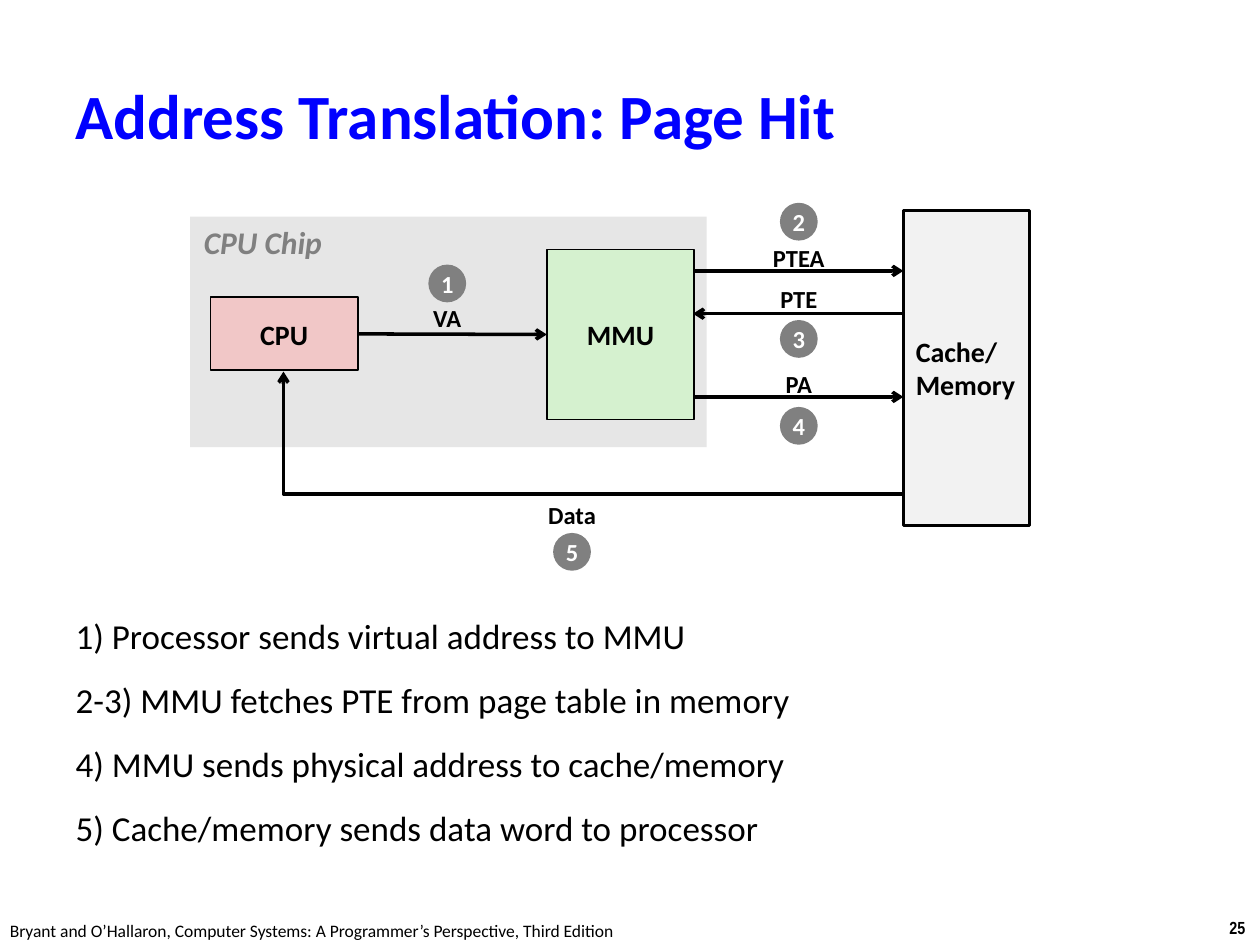
from lxml.etree import SubElement
from pptx import Presentation
from pptx.dml.color import RGBColor
from pptx.enum.shapes import MSO_CONNECTOR, MSO_SHAPE
from pptx.enum.text import MSO_ANCHOR, PP_ALIGN
from pptx.oxml.ns import qn
from pptx.util import Inches, Pt

BLACK, GRAY, WHITE = "000000", "808080", "FFFFFF"
BADGE_SIZE = 0.3
LABEL_WIDTH, LABEL_HEIGHT = 0.8, 0.33
STEPS = [
    "1) Processor sends virtual address to MMU",
    "2-3) MMU fetches PTE from page table in memory",
    "4) MMU sends physical address to cache/memory",
    "5) Cache/memory sends data word to processor",
]


def color(hex_value):
    return RGBColor.from_string(hex_value)


def write_text(shape, lines, size, text_color=BLACK, align=PP_ALIGN.LEFT,
               anchor=MSO_ANCHOR.MIDDLE, wrap=False, **font_values):
    frame = shape.text_frame
    frame.text = "\n".join(lines)
    frame.word_wrap = wrap
    frame.vertical_anchor = anchor
    values = {"name": "Calibri", "size": Pt(size), "bold": True, **font_values}
    for paragraph in frame.paragraphs:
        paragraph.alignment = align
        for run in paragraph.runs:
            for name, value in values.items():
                setattr(run.font, name, value)
            run.font.color.rgb = color(text_color)


def place(shape, left, top, width, height):
    values = {"left": left, "top": top, "width": width, "height": height}
    for name, value in values.items():
        setattr(shape, name, Inches(value))


def add_block(slide, box, fill, line_width=None, kind=MSO_SHAPE.RECTANGLE):
    shape = slide.shapes.add_shape(kind, *map(Inches, box))
    shape.shadow.inherit = False
    shape.fill.solid()
    shape.fill.fore_color.rgb = color(fill)
    if line_width:
        shape.line.color.rgb = color(BLACK)
        shape.line.width = Pt(line_width)
    else:
        shape.line.fill.background()
    return shape


def add_label(slide, box, text, size, **text_values):
    label = slide.shapes.add_textbox(*map(Inches, box))
    write_text(label, [text], size, **text_values)


def add_signal_label(slide, center, top, text):
    box = (center - LABEL_WIDTH / 2, top, LABEL_WIDTH, LABEL_HEIGHT)
    add_label(slide, box, text, 14, align=PP_ALIGN.CENTER)


def add_badge(slide, center, top, number):
    box = (center - BADGE_SIZE / 2, top, BADGE_SIZE, BADGE_SIZE)
    badge = add_block(slide, box, GRAY, kind=MSO_SHAPE.OVAL)
    write_text(badge, [str(number)], 14, WHITE, PP_ALIGN.CENTER)


def add_arrow(slide, start, end, kind=MSO_CONNECTOR.STRAIGHT):
    connector = slide.shapes.add_connector(kind, *map(Inches, start + end))
    connector.line.color.rgb = color(BLACK)
    connector.line.width = Pt(2)
    properties = connector.element.spPr
    SubElement(properties.find(qn("a:ln")), qn("a:tailEnd"), type="arrow")
    SubElement(properties, qn("a:effectLst"))
    return connector


def add_corner_arrow(slide, start, end):
    connector = add_arrow(slide, start, end, MSO_CONNECTOR.ELBOW)
    # One bend only: sideways, then up
    connector.element.spPr.find(qn("a:prstGeom")).set("prst", "bentConnector2")


def fill_steps(body):
    place(body, 0.5, 4.83, 7.42, 2.25)
    write_text(body, STEPS, 20, anchor=MSO_ANCHOR.TOP, wrap=True, bold=False)
    for paragraph in body.text_frame.paragraphs:
        paragraph.space_before = Pt(12.5)
        properties = paragraph._p.get_or_add_pPr()
        properties.set("marL", str(Inches(0.38)))
        properties.set("indent", str(Inches(-0.38)))
        SubElement(properties, qn("a:buNone"))


def main():
    presentation = Presentation()
    presentation.slide_width = Inches(10)
    presentation.slide_height = Inches(7.5)
    slide = presentation.slides.add_slide(presentation.slide_layouts[1])

    # Chip area, behind the hardware units
    add_block(slide, (1.51, 1.72, 4.1, 1.83), "E6E6E6")
    add_label(slide, (1.52, 1.72, 1.16, 0.4), "CPU Chip", 18, text_color=GRAY,
              anchor=MSO_ANCHOR.TOP, italic=True)

    # Title and steps
    title, body = slide.placeholders
    place(title, 0.5, 0.48, 9.53, 0.86)
    write_text(title, ["Address Translation: Page Hit"], 36, "0000FF", wrap=True)
    fill_steps(body)

    # Hardware units
    cpu = add_block(slide, (1.67, 2.36, 1.17, 0.58), "F1C7C7", 1)
    mmu = add_block(slide, (4.34, 1.98, 1.17, 1.35), "D5F1CF", 1)
    memory = add_block(slide, (7.17, 1.67, 1, 2.5), "F2F2F2", 1.5)
    write_text(cpu, ["CPU"], 16, align=PP_ALIGN.CENTER)
    write_text(mmu, ["MMU"], 16, align=PP_ALIGN.CENTER)
    write_text(memory, ["Cache/", "Memory"], 16)

    # Signals between the units
    address_arrow = add_arrow(slide, (2.84, 2.65), (4.34, 2.65))
    address_arrow.begin_connect(cpu, 3)
    address_arrow.end_connect(mmu, 1)
    mmu_side, memory_side = 5.5, 7.17
    add_arrow(slide, (mmu_side, 2.15), (memory_side, 2.15))
    add_arrow(slide, (memory_side, 2.49), (mmu_side, 2.49))
    add_arrow(slide, (mmu_side, 3.15), (memory_side, 3.15))
    add_corner_arrow(slide, (memory_side, 3.92), (2.25, 2.95))

    # Signal names and step numbers: centre, label top, badge top
    signals = [
        ("VA", 3.55, 2.36, 2.1),
        ("PTEA", 6.34, 1.88, 1.61),
        ("PTE", 6.34, 2.21, 2.54),
        ("PA", 6.34, 2.88, 3.23),
        ("Data", 4.54, 3.92, 4.23),
    ]
    for number, (name, center, label_top, badge_top) in enumerate(signals, 1):
        add_signal_label(slide, center, label_top, name)
        add_badge(slide, center, badge_top, number)

    # Footer
    add_label(slide, (-0.02, 7.25, 5.08, 0.27),
              "Bryant and O’Hallaron, Computer Systems: "
              "A Programmer’s Perspective, Third Edition",
              10, anchor=MSO_ANCHOR.TOP, bold=False)
    add_label(slide, (9.66, 7.23, 0.34, 0.27), "25", 10,
              anchor=MSO_ANCHOR.TOP, name="Arial Narrow")

    presentation.save("out.pptx")


if __name__ == "__main__":
    main()
